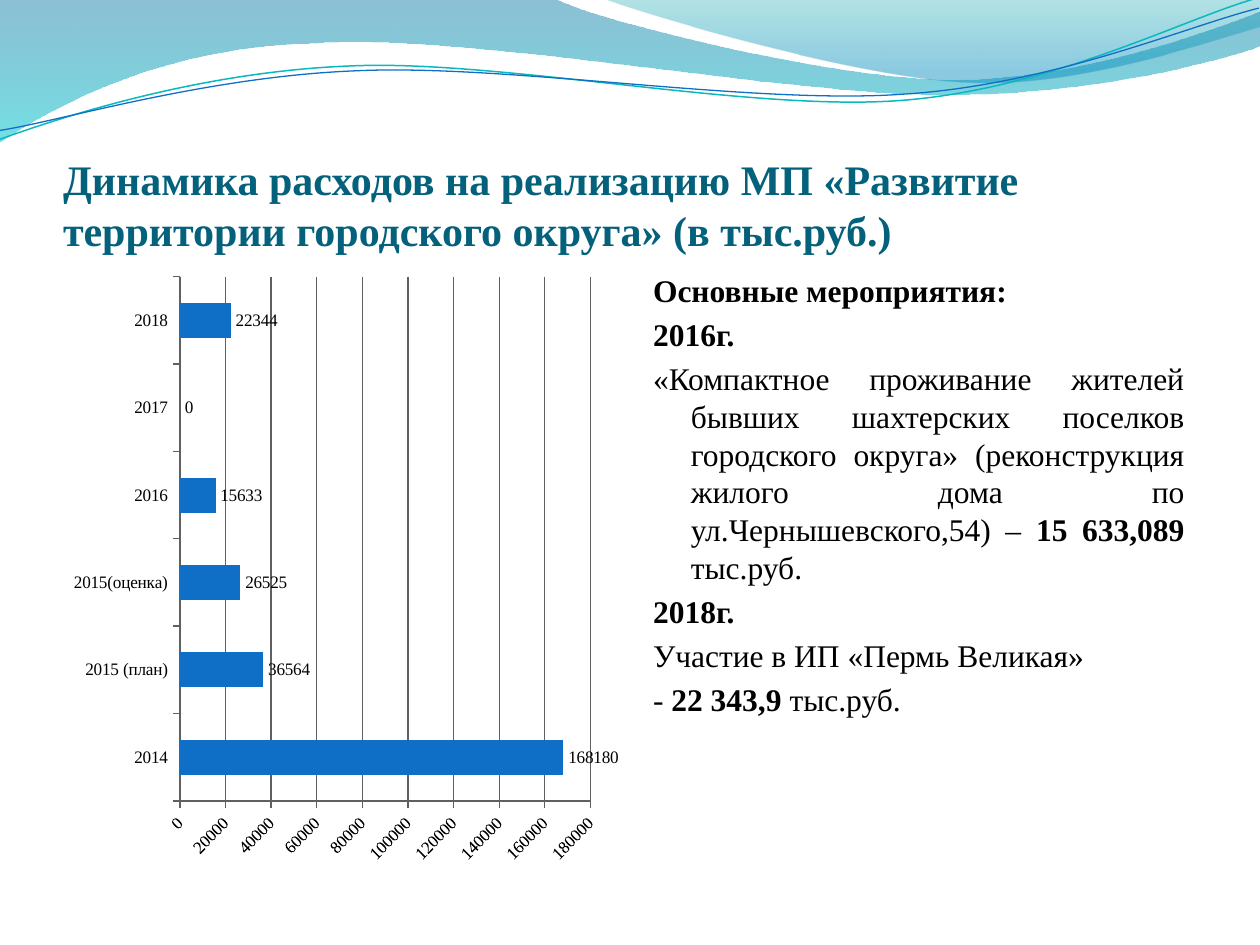
from lxml import etree
from pptx import Presentation
from pptx.chart.data import CategoryChartData
from pptx.dml.color import RGBColor
from pptx.enum.chart import XL_CHART_TYPE, XL_LABEL_POSITION, XL_TICK_MARK
from pptx.enum.text import MSO_ANCHOR, MSO_AUTO_SIZE, PP_ALIGN
from pptx.oxml.ns import qn
from pptx.util import Inches, Pt

BAR = XL_CHART_TYPE.BAR_CLUSTERED
OUTSIDE_END = XL_LABEL_POSITION.OUTSIDE_END
OUTSIDE = XL_TICK_MARK.OUTSIDE
BOTTOM, NO_FIT = MSO_ANCHOR.BOTTOM, MSO_AUTO_SIZE.NONE
LEFT, JUSTIFY = PP_ALIGN.LEFT, PP_ALIGN.JUSTIFY


class Theme:
    font = "Times New Roman"
    chart_font = "TeX Gyre Pagella"
    title, text, bar, grid = "04617B", "000000", "0F6FC6", "606060"
    title_size, body_size, chart_size = 24, 18, 10


def add_text(para, text, size=Theme.body_size, color=Theme.text, bold=False):
    span = para.add_run()
    span.text = text
    span.font.name = Theme.font
    span.font.size = Pt(size)
    span.font.bold = bold
    span.font.color.rgb = RGBColor.from_string(color)


def draw_curve(shapes, start, segments, close):
    """Draw an outline; a segment is one line end or three Bezier points."""
    points = [(Inches(x), Inches(y)) for segment in segments for x, y in segment]
    builder = shapes.build_freeform(Inches(start[0]), Inches(start[1]), scale=1.0)
    builder.add_line_segments(points, close=close)
    shape = builder.convert_to_shape()
    shape.shadow.inherit = False
    # Merge each three points of a curve into one Bezier element
    line_ends = iter(list(shape._element.iter(qn("a:lnTo"))))
    for segment in segments:
        nodes = [next(line_ends) for _ in segment]
        if len(nodes) == 3:
            curve = etree.Element(qn("a:cubicBezTo"))
            nodes[0].addprevious(curve)
            for node in nodes:
                curve.append(node[0])
                node.getparent().remove(node)
    return shape


deck = Presentation()
deck.slide_width, deck.slide_height = Inches(10), Inches(7.5)
page = deck.slides.add_slide(deck.slide_layouts[5])

# Two equal columns between the side margins
margin = Inches(0.5)
content_width = deck.slide_width - 2 * margin
gutter = Inches(0.17)
column_width = (content_width - gutter) // 2
column_top, column_height = Inches(2.1), Inches(4.85)

# Translucent waves: start, segments, (position, colour, opacity) stops
waves = [
    ((0, 0), [
        [(4.4, -0.01)],
        [(4.76, 0.17), (6.64, 0.63), (7.58, 0.63)],
        [(8.53, 0.63), (9.58, 0.26), (10, 0.09)],
        [(10.01, 0.36)],
        [(9.83, 0.44), (8.7, 0.76), (7.46, 0.75)],
        [(6.22, 0.75), (3.82, 0.28), (2.57, 0.34)],
        [(1.29, 0.36), (0.46, 0.83), (-0.01, 1.13)],
        [(0, 0)],
    ], [(0, "0074A1", 45), (1, "00C6CF", 55)]),
    ((4.79, -0.01), [
        [(5.09, 0.11), (6.82, 0.62), (7.69, 0.65)],
        [(8.56, 0.69), (9.61, 0.32), (10, 0.21)],
        [(10, 0)],
        [(4.79, -0.01)],
    ], [(0, "00A1A9", 30), (0.8, "008BBF", 45)]),
]
for start, segments, stops in waves:
    wave = draw_curve(page.shapes, start, segments, close=True)
    wave.line.fill.background()
    wave.fill.gradient()
    wave.fill.gradient_angle = 270
    for stop, (position, color, opacity) in zip(wave.fill.gradient_stops, stops):
        stop.position = position
        stop.color.rgb = RGBColor.from_string(color)
    for node, (_, _, opacity) in zip(wave._element.spPr.iter(qn("a:srgbClr")), stops):
        etree.SubElement(node, qn("a:alpha")).set("val", str(opacity * 1000))

# Thin lines along the waves, grouped and slightly turned
strands = [
    ((-0.02, 0.87), [
        [(0.47, 0.72), (1.58, 0.41), (2.78, 0.42)],
        [(3.96, 0.42), (5.91, 0.93), (7.12, 0.9)],
        [(8.32, 0.87), (9.4, 0.36), (10, 0.22)],
    ], "0AB8BF", 0.85),
    ((-0.02, 0.8), [
        [(0.46, 0.75), (1.64, 0.45), (2.83, 0.46)],
        [(4.03, 0.46), (5.96, 0.88), (7.16, 0.85)],
        [(8.35, 0.83), (9.42, 0.42), (10.01, 0.3)],
    ], "0F6FC6", 0.75),
]
strand_group = page.shapes.add_group_shape()
for start, segments, color, width in strands:
    strand = draw_curve(strand_group.shapes, start, segments, close=False)
    strand.rotation = 357.3
    strand.fill.background()
    strand.line.color.rgb = RGBColor.from_string(color)
    strand.line.width = Pt(width)

# Title, in front of the waves
title = page.shapes.title
title.left, title.top = margin, Inches(0.77)
title.width, title.height = content_width, Inches(1.25)
page.shapes._spTree.append(title._element)
frame = title.text_frame
frame.auto_size, frame.vertical_anchor = NO_FIT, BOTTOM
frame.margin_left = frame.margin_right = frame.margin_bottom = 0
frame.margin_top = Inches(0.05)
frame.paragraphs[0].alignment = LEFT
add_text(frame.paragraphs[0],
         "Динамика расходов на реализацию МП «Развитие территории городского округа» (в тыс.руб.)",
         size=Theme.title_size, color=Theme.title, bold=True)

# Main measures: alignment, then (text, bold) spans
measures = [
    (LEFT, [("Основные мероприятия:", True)]),
    (LEFT, [("2016г.", True)]),
    (JUSTIFY, [("«Компактное проживание жителей бывших шахтерских поселков городского округа» "
                "(реконструкция жилого дома по ул.Чернышевского,54) – ", False),
               ("15 633,089 ", True), ("тыс.руб.", False)]),
    (JUSTIFY, [("2018г.", True)]),
    (JUSTIFY, [("Участие в ИП «Пермь Великая»", False)]),
    (JUSTIFY, [("- ", False), ("22 343,9 ", True), ("тыс.руб.", False)]),
]
box = page.shapes.add_textbox(margin + column_width + gutter, column_top,
                              column_width, column_height)
frame = box.text_frame
frame.word_wrap = True
for index, (alignment, spans) in enumerate(measures):
    para = frame.add_paragraph() if index else frame.paragraphs[0]
    para.alignment = alignment
    para.space_before = Pt(0.2 * Theme.body_size)
    properties = para._p.get_or_add_pPr()
    properties.set("marL", str(Inches(0.3)))
    properties.set("indent", str(-Inches(0.3)))
    for text, bold in spans:
        add_text(para, text, bold=bold)

# Spending by year
spending = CategoryChartData()
spending.categories = ["2014", "2015 (план)", "2015(оценка)", "2016", "2017", "2018"]
spending.add_series("Series 1", [168180, 36564, 26525, 15633, 0, 22344])
chart = page.shapes.add_chart(BAR, margin, column_top, column_width, column_height,
                              spending).chart
chart.has_legend = chart.has_title = False
chart.font.name = Theme.chart_font
chart.font.size = Pt(Theme.chart_size)
chart.font.color.rgb = RGBColor.from_string(Theme.text)

plot = chart.plots[0]
plot.gap_width = 150
plot.vary_by_categories = False
fill = plot.series[0].format.fill
fill.solid()
fill.fore_color.rgb = RGBColor.from_string(Theme.bar)
plot.has_data_labels = True
labels = plot.data_labels
labels.show_value, labels.position = True, OUTSIDE_END

for axis in (chart.category_axis, chart.value_axis):
    axis.major_tick_mark = OUTSIDE
for part in (chart.category_axis, chart.value_axis, chart.value_axis.major_gridlines):
    part.format.line.color.rgb = RGBColor.from_string(Theme.grid)
    part.format.line.width = Pt(0.75)
for font in (labels.font, chart.category_axis.tick_labels.font,
             chart.value_axis.tick_labels.font):
    font.name = Theme.font
    font.size = Pt(Theme.chart_size)
    font.color.rgb = RGBColor.from_string(Theme.text)
value_text = chart.value_axis._element.find(qn("c:txPr"))
value_text.find(qn("a:bodyPr")).set("rot", str(-45 * 60000))

deck.save("out.pptx")
